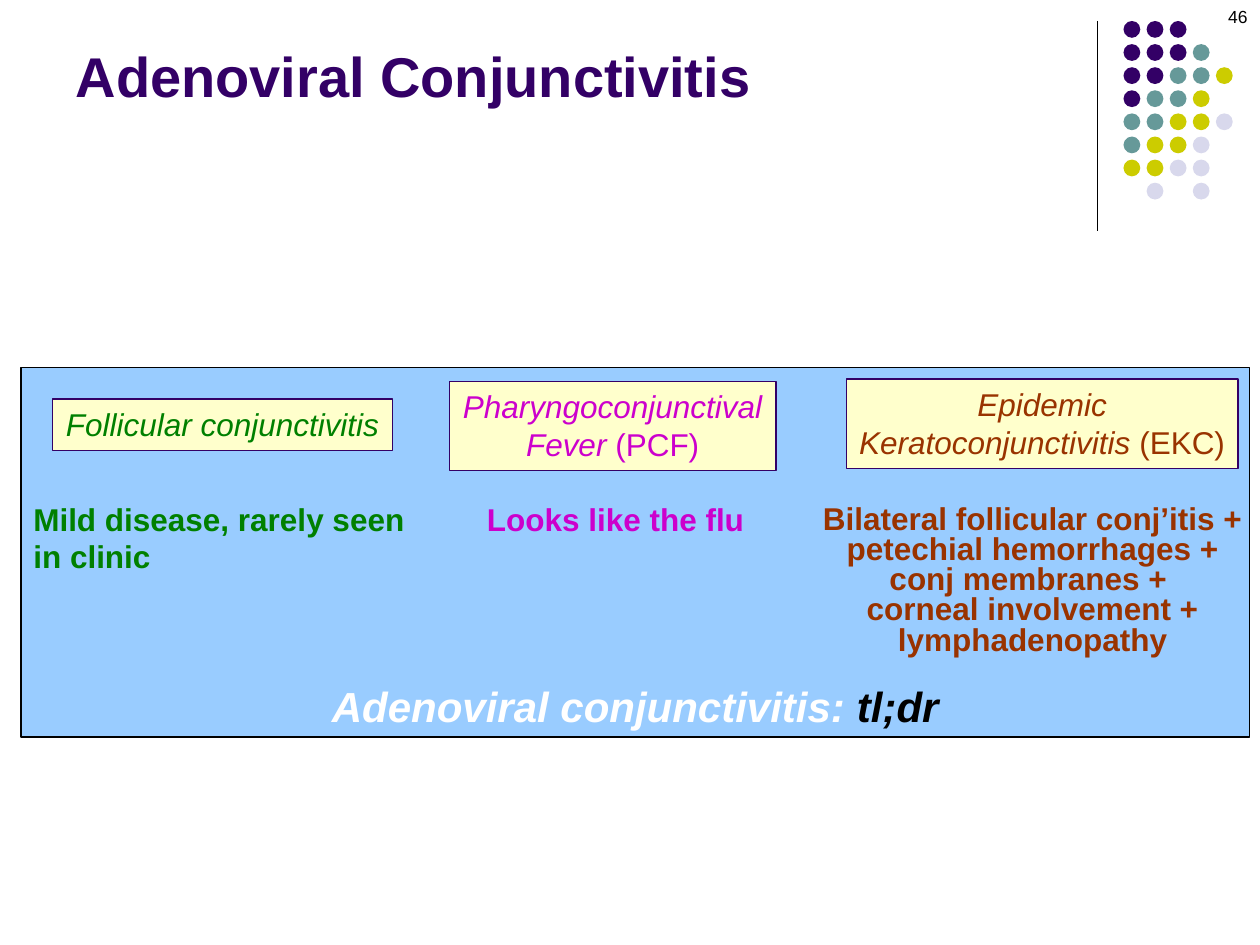
"""Build the Adenoviral Conjunctivitis summary slide on a grid of 120 columns by 90 rows."""
from lxml.etree import SubElement
from pptx import Presentation
from pptx.dml.color import RGBColor
from pptx.enum.shapes import MSO_CONNECTOR, MSO_SHAPE
from pptx.enum.text import MSO_ANCHOR, MSO_AUTO_SIZE, PP_ALIGN
from pptx.oxml.ns import qn
from pptx.util import Inches, Pt

BLACK = RGBColor(0x00, 0x00, 0x00)
WHITE = RGBColor(0xFF, 0xFF, 0xFF)
PURPLE = RGBColor(0x33, 0x00, 0x66)
TEAL = RGBColor(0x66, 0x99, 0x99)
OLIVE = RGBColor(0xCC, 0xCC, 0x00)
LAVENDER = RGBColor(0xD8, 0xD8, 0xEC)
SKY = RGBColor(0x99, 0xCC, 0xFF)
CREAM = RGBColor(0xFF, 0xFF, 0xCC)
GREEN = RGBColor(0x00, 0x80, 0x00)
MAGENTA = RGBColor(0xCC, 0x00, 0xCC)
RUST = RGBColor(0x99, 0x33, 0x00)

deck = Presentation()
deck.slide_width, deck.slide_height = Inches(10), Inches(7.5)
COLUMN, ROW = deck.slide_width / 120, deck.slide_height / 90
page = deck.slides.add_slide(deck.slide_layouts[5])


def place(left, top, width, height):
    """Turn grid columns and rows into lengths."""
    return [round(n * unit) for n, unit in zip((left, top, width, height), (COLUMN, ROW) * 2)]


def write(box, lines, align=PP_ALIGN.LEFT, wrap=False, anchor=MSO_ANCHOR.TOP, spacing=None):
    """Fill a box with lines, each a list of (text, size, colour, bold, italic) spans."""
    frame = box.text_frame
    settings = {"word_wrap": wrap, "auto_size": MSO_AUTO_SIZE.NONE, "vertical_anchor": anchor}
    for name, value in settings.items():
        setattr(frame, name, value)
    for index, line in enumerate(lines):
        para = frame.add_paragraph() if index else frame.paragraphs[0]
        para.alignment = align
        para.line_spacing = spacing
        for text, size, colour, bold, italic in line:
            span = para.add_run()
            span.text = text
            span.font.color.rgb = colour
            look = {"name": "Arial", "size": Pt(size), "bold": bold, "italic": italic}
            for name, value in look.items():
                setattr(span.font, name, value)


divider = page.shapes.add_connector(MSO_CONNECTOR.STRAIGHT, *place(104.5, 2, 104.5, 22))
divider.line.color.rgb = BLACK
divider.line.width = Pt(0.75)
SubElement(divider._element.spPr, qn("a:effectLst"))

dot_colours = {"P": PURPLE, "T": TEAL, "O": OLIVE, "L": LAVENDER}
dot_rows = ["PPP", "PPPT", "PPTTO", "PTTO", "TTOOL", "TOOL", "OOLL", ".L.L"]
for row, letters in enumerate(dot_rows):
    for column, letter in enumerate(letters):
        if letter in dot_colours:
            spot = place(107 + 2.2 * column, 2 + 2.2 * row, 1.6, 1.6)
            dot = page.shapes.add_shape(MSO_SHAPE.OVAL, *spot)
            dot.shadow.inherit = False
            dot.fill.solid()
            dot.fill.fore_color.rgb = dot_colours[letter]
            dot.line.fill.background()

title = page.shapes.title
title.left, title.top, title.width, title.height = place(6, 3, 99, 8)
write(title, [[("Adenoviral Conjunctivitis", 32, PURPLE, True, False)]],
      wrap=True, anchor=MSO_ANCHOR.BOTTOM)

number = page.shapes.add_textbox(*place(92, 0, 28, 6))
write(number, [[("46", 10, BLACK, False, False)]], PP_ALIGN.RIGHT, wrap=True)

summary = [[("Adenoviral conjunctivitis: ", 24, WHITE, True, True), ("tl;dr", 24, BLACK, True, True)]]
follicular = [[("Follicular conjunctivitis", 18, GREEN, False, True)]]
pharyngeal = [[("Pharyngoconjunctival", 18, MAGENTA, False, True)],
              [("Fever", 18, MAGENTA, False, True), (" (PCF)", 18, MAGENTA, False, False)]]
epidemic = [[("Epidemic", 18, RUST, False, True)],
            [("Keratoconjunctivitis", 18, RUST, False, True), (" (EKC)", 18, RUST, False, False)]]
panels = [
    ((2, 35, 117, 35.2), SKY, BLACK, summary, MSO_ANCHOR.BOTTOM),
    ((80.6, 36.1, 37.3, 8.5), CREAM, PURPLE, epidemic, MSO_ANCHOR.TOP),
    ((5, 38, 32.4, 4.9), CREAM, PURPLE, follicular, MSO_ANCHOR.TOP),
    ((42.8, 36.3, 31.1, 8.5), CREAM, PURPLE, pharyngeal, MSO_ANCHOR.TOP),
]
for area, fill, edge, lines, anchor in panels:
    box = page.shapes.add_shape(MSO_SHAPE.RECTANGLE, *place(*area))
    box.shadow.inherit = False
    box.fill.solid()
    box.fill.fore_color.rgb = fill
    box.line.color.rgb = edge
    box.line.width = Pt(0.75)
    write(box, lines, PP_ALIGN.CENTER, anchor=anchor)

descriptions = [
    ((2, 47, 38.2, 8.5), GREEN, PP_ALIGN.LEFT, None, ["Mild disease, rarely seen", "in clinic"]),
    ((45.2, 47, 27.1, 4.8), MAGENTA, PP_ALIGN.LEFT, None, ["Looks like the flu"]),
    ((77, 47.6, 42.7, 15.7), RUST, PP_ALIGN.CENTER, 0.8,
     ["Bilateral follicular conj’itis +", "petechial hemorrhages +", "conj membranes + ",
      "corneal involvement +", "lymphadenopathy"]),
]
for area, colour, align, spacing, texts in descriptions:
    box = page.shapes.add_textbox(*place(*area))
    write(box, [[(text, 18, colour, True, False)] for text in texts], align, spacing=spacing)

deck.save("out.pptx")
